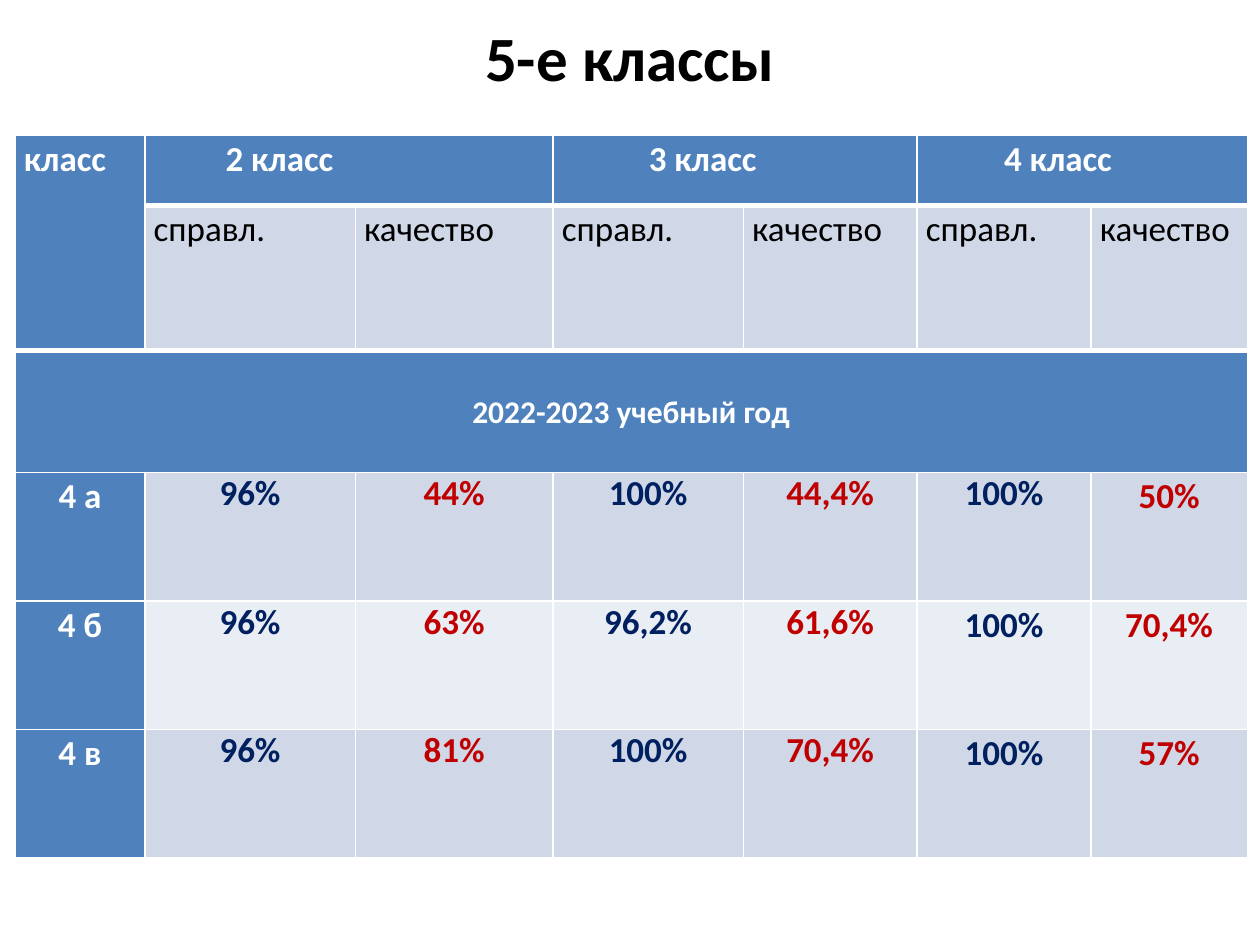
from dataclasses import dataclass

from lxml.etree import SubElement
from pptx import Presentation
from pptx.dml.color import RGBColor
from pptx.enum.text import MSO_ANCHOR, PP_ALIGN
from pptx.oxml.ns import qn
from pptx.util import Inches, Pt


@dataclass(frozen=True)
class Theme:
    """Colours, type sizes and spacing of the deck."""
    font: str = "Calibri"
    black: str = "000000"
    white: str = "FFFFFF"
    header: str = "4F81BD"
    band_dark: str = "D0D8E8"
    band_light: str = "E9EDF4"
    success: str = "002060"
    quality: str = "C00000"
    title_size: int = 36
    table_size: int = 20
    year_size: int = 18
    line_spacing: float = 1.07
    thin_line: int = 1
    thick_line: int = 3


THEME = Theme()
COLUMN_WIDTHS = [1.03, 1.67, 1.57, 1.51, 1.38, 1.38, 1.24]
ROW_HEIGHTS = [0.56, 1.15, 0.97, 1.02, 1.02, 1.02]
GRADES = [("2 класс", 0.57), ("3 класс", 0.69), ("4 класс", 0.62)]
MEASURES = [("справл.", THEME.success), ("качество", THEME.quality)]
YEAR = "2022-2023 учебный год"
RESULTS = [
    ("4 а", ["96%", "44%", "100%", "44,4%", "100%", "50%"], 6),
    ("4 б", ["96%", "63%", "96,2%", "61,6%", "100%", "70,4%"], 5),
    ("4 в", ["96%", "81%", "100%", "70,4%", "100%", "57%"], 5),
]


def write_text(frame, text, size=THEME.table_size, color=THEME.white, bold=True,
               align=PP_ALIGN.LEFT, spacing=THEME.line_spacing, indent=0):
    """Write one formatted paragraph into a text frame."""
    para = frame.paragraphs[0]
    para.alignment = align
    para.line_spacing = spacing
    if indent:
        para._p.get_or_add_pPr().set("marL", str(Inches(indent)))
    span = para.add_run()
    span.text = text
    span.font.name = THEME.font
    span.font.size = Pt(size)
    span.font.bold = bold
    span.font.color.rgb = RGBColor.from_string(color)


def add_border(cell, side, width):
    """Draw one white edge of a cell."""
    line = SubElement(cell._tc.get_or_add_tcPr(), qn(f"a:ln{side}"), w=str(Pt(width)))
    fill = SubElement(line, qn("a:solidFill"))
    SubElement(fill, qn("a:srgbClr"), val=THEME.white)


def style_cell(cell, row, column):
    """Set the margins, borders and fill that suit a cell's position."""
    cell.margin_left = cell.margin_right = Inches(0.07)
    cell.margin_top = cell.margin_bottom = 0
    top = THEME.thick_line if row in (1, 2) else THEME.thin_line
    bottom = THEME.thick_line if row in (0, 1) else THEME.thin_line
    for side, width in zip("LRTB", (THEME.thin_line, THEME.thin_line, top, bottom)):
        add_border(cell, side, width)
    if row in (0, 2) or column == 0:
        color = THEME.header
    else:
        color = THEME.band_light if row == 4 else THEME.band_dark
    cell.fill.solid()
    cell.fill.fore_color.rgb = RGBColor.from_string(color)


def place_title(page, left, top, width, height):
    """Place the slide title in its box."""
    title = page.shapes.title
    title.left, title.top = Inches(left), Inches(top)
    title.width, title.height = Inches(width), Inches(height)
    title.text_frame.vertical_anchor = MSO_ANCHOR.MIDDLE
    write_text(title.text_frame, "5-е классы", size=THEME.title_size,
               color=THEME.black, align=PP_ALIGN.CENTER, spacing=1.0)


def fill_headings(table):
    """Fill the grade headings, measure names and school year."""
    table.cell(0, 0).merge(table.cell(1, 0))
    write_text(table.cell(0, 0).text_frame, "класс")
    for index, (grade, indent) in enumerate(GRADES):
        first = 1 + index * len(MEASURES)
        heading = table.cell(0, first)
        heading.merge(table.cell(0, first + 1))
        write_text(heading.text_frame, grade, indent=indent)
        for offset, (measure, _) in enumerate(MEASURES):
            write_text(table.cell(1, first + offset).text_frame, measure,
                       color=THEME.black, bold=False)
    year = table.cell(2, 0)
    year.merge(table.cell(2, len(COLUMN_WIDTHS) - 1))
    year.vertical_anchor = MSO_ANCHOR.MIDDLE
    write_text(year.text_frame, YEAR, size=THEME.year_size, align=PP_ALIGN.CENTER)


def fill_results(table):
    """Fill the class names and their percentages."""
    for row, (name, values, first_spaced) in enumerate(RESULTS, start=3):
        write_text(table.cell(row, 0).text_frame, name, align=PP_ALIGN.CENTER)
        for column, value in enumerate(values, start=1):
            color = MEASURES[(column - 1) % len(MEASURES)][1]
            spacing = THEME.line_spacing if column >= first_spaced else 1.0
            write_text(table.cell(row, column).text_frame, value, color=color,
                       align=PP_ALIGN.CENTER, spacing=spacing)


def place_table(page, left, top, width, height):
    """Place the table of class results in its box."""
    box = page.shapes.add_table(len(ROW_HEIGHTS), len(COLUMN_WIDTHS), Inches(left),
                                Inches(top), Inches(width), Inches(height))
    table = box.table
    for column, column_width in zip(table.columns, COLUMN_WIDTHS):
        column.width = Inches(column_width)
    for row, row_height in zip(table.rows, ROW_HEIGHTS):
        row.height = Inches(row_height)
    for row in range(len(ROW_HEIGHTS)):
        for column in range(len(COLUMN_WIDTHS)):
            style_cell(table.cell(row, column), row, column)
    fill_headings(table)
    fill_results(table)


def main():
    """Build and save the deck."""
    deck = Presentation()
    deck.slide_width, deck.slide_height = Inches(10), Inches(7.5)
    page = deck.slides.add_slide(deck.slide_layouts.get_by_name("Title Only"))
    place_title(page, 0.5, 0.13, 9, 0.63)
    place_table(page, 0.12, 1.07, 9.76, 5.75)
    deck.save("out.pptx")


if __name__ == "__main__":
    main()
